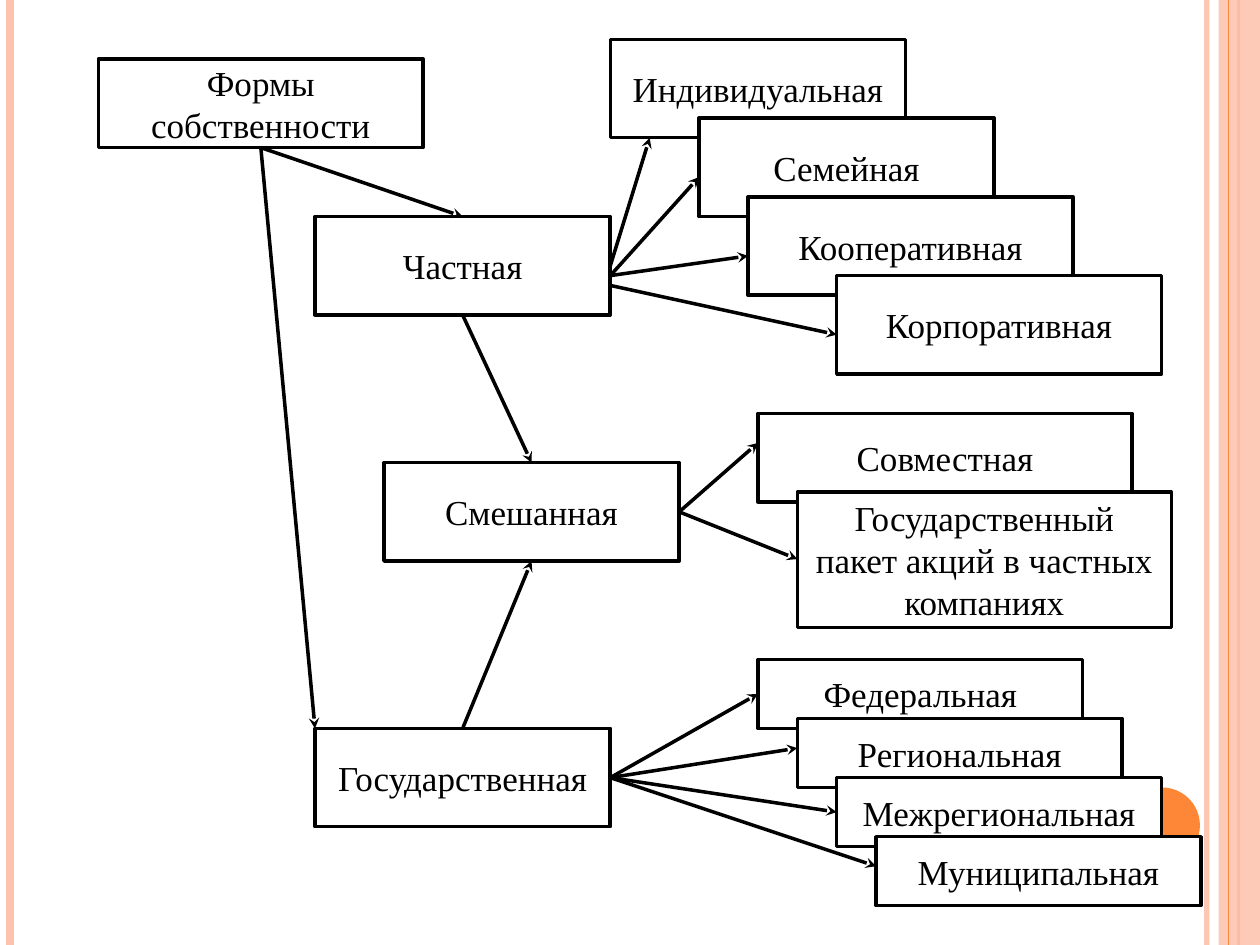
from pptx import Presentation
from pptx.dml.color import RGBColor
from pptx.enum.shapes import MSO_CONNECTOR, MSO_SHAPE
from pptx.enum.text import MSO_ANCHOR, PP_ALIGN
from pptx.oxml.ns import qn
from pptx.util import Inches, Pt
from lxml.etree import SubElement

COLS = 128  # the slide is a grid of 128 columns and 96 rows
ROWS = 96


def rgb(code):
    return RGBColor.from_string(code)


def fade(part, share):
    """Set the opacity, in percent, of the solid colour inside part."""
    for tone in part.iter(qn("a:srgbClr")):
        SubElement(tone, qn("a:alpha")).set("val", str(share * 1000))


class Board:
    font = "Times New Roman"
    size = Pt(20)
    ink = "000000"
    paper = "FFFFFF"
    peach = "FEC3AE"
    orange = "FE8637"

    def __init__(self, deck):
        self.slide = deck.slides.add_slide(deck.slide_layouts[6])
        self.unit = deck.slide_width / COLS

    def grid(self, *cells):
        return [round(cell * self.unit) for cell in cells]

    def shape(self, kind, place, fill):
        item = self.slide.shapes.add_shape(kind, *self.grid(*place))
        item.shadow.inherit = False
        item.fill.solid()
        item.fill.fore_color.rgb = rgb(fill)
        item.line.fill.background()
        return item

    def box(self, text, *place):
        item = self.shape(MSO_SHAPE.RECTANGLE, place, self.paper)
        item.line.color.rgb = rgb(self.ink)
        item.line.width = Pt(2)
        frame = item.text_frame
        frame.word_wrap = True
        frame.vertical_anchor = MSO_ANCHOR.MIDDLE
        frame.text = text
        for para in frame.paragraphs:
            para.alignment = PP_ALIGN.CENTER
            para.font.name = self.font
            para.font.size = self.size
            para.font.color.rgb = rgb(self.ink)

    def line(self, start, end, color, width):
        item = self.slide.shapes.add_connector(
            MSO_CONNECTOR.STRAIGHT, *self.grid(*start, *end))
        item.line.color.rgb = rgb(color)
        item.line.width = Pt(width)
        SubElement(item._element.spPr, qn("a:effectLst"))
        return item

    def arrow(self, start, end):
        item = self.line(start, end, self.ink, 2)
        stroke = item.line._get_or_add_ln()
        SubElement(stroke, qn("a:tailEnd")).set("type", "stealth")

    def stripe(self, col, color, width):
        return self.line((col, 0), (col, ROWS), color, width)


def main():
    deck = Presentation()
    deck.slide_width, deck.slide_height = Inches(10), Inches(7.5)
    board = Board(deck)

    # Side stripes and disc
    fade(board.stripe(122.6, board.peach, 3)._element.spPr, 93)
    board.stripe(1, board.peach, 4.5)
    board.stripe(125.8, board.orange, 1.5)
    band = board.shape(MSO_SHAPE.RECTANGLE, (123.8, 0, 4.2, ROWS), board.peach)
    fade(band._element.spPr, 87)
    board.stripe(124.8, board.orange, 0.75)
    board.shape(MSO_SHAPE.OVAL, (114.2, 80, 7.7, 7.7), board.orange)

    # Main forms
    board.box("Формы собственности", 10, 6, 33, 9)
    board.box("Частная", 32, 22, 30, 10)
    board.box("Смешанная", 39, 47, 30, 10)
    board.box("Государственная", 32, 74, 30, 10)

    # Private kinds
    private = [("Индивидуальная", 62, 30), ("Семейная", 71, 30),
               ("Кооперативная", 76, 33), ("Корпоративная", 85, 33)]
    for step, (name, col, wide) in enumerate(private):
        board.box(name, col, 4 + 8 * step, wide, 10)

    # Mixed kinds
    board.box("Совместная", 77, 42, 38, 9)
    board.box("Государственный\nпакет акций в частных компаниях",
              81, 50, 38, 13.75)

    # State kinds
    state = ["Федеральная", "Региональная", "Межрегиональная", "Муниципальная"]
    for step, name in enumerate(state):
        col, row = 77 + 4 * step, 67 + 6 * step
        board.box(name, col, row, 33, 7)
        board.arrow((62, 79), (col, row + 3.5 - step % 2 / 2))

    # Arrows to the other kinds and between the main forms
    links = [((62, 27), (66, 14)), ((62, 28), (71, 18)),
             ((62, 28), (76, 26)), ((62, 29), (85, 34)),
             ((69, 52), (77, 45)), ((69, 52), (81, 56.8)),
             ((47, 74), (54, 57)), ((47, 32), (54, 47)),
             ((26.5, 15), (47, 22)), ((26.5, 15), (32, 74))]
    for start, end in links:
        board.arrow(start, end)

    deck.save("out.pptx")


if __name__ == "__main__":
    main()
